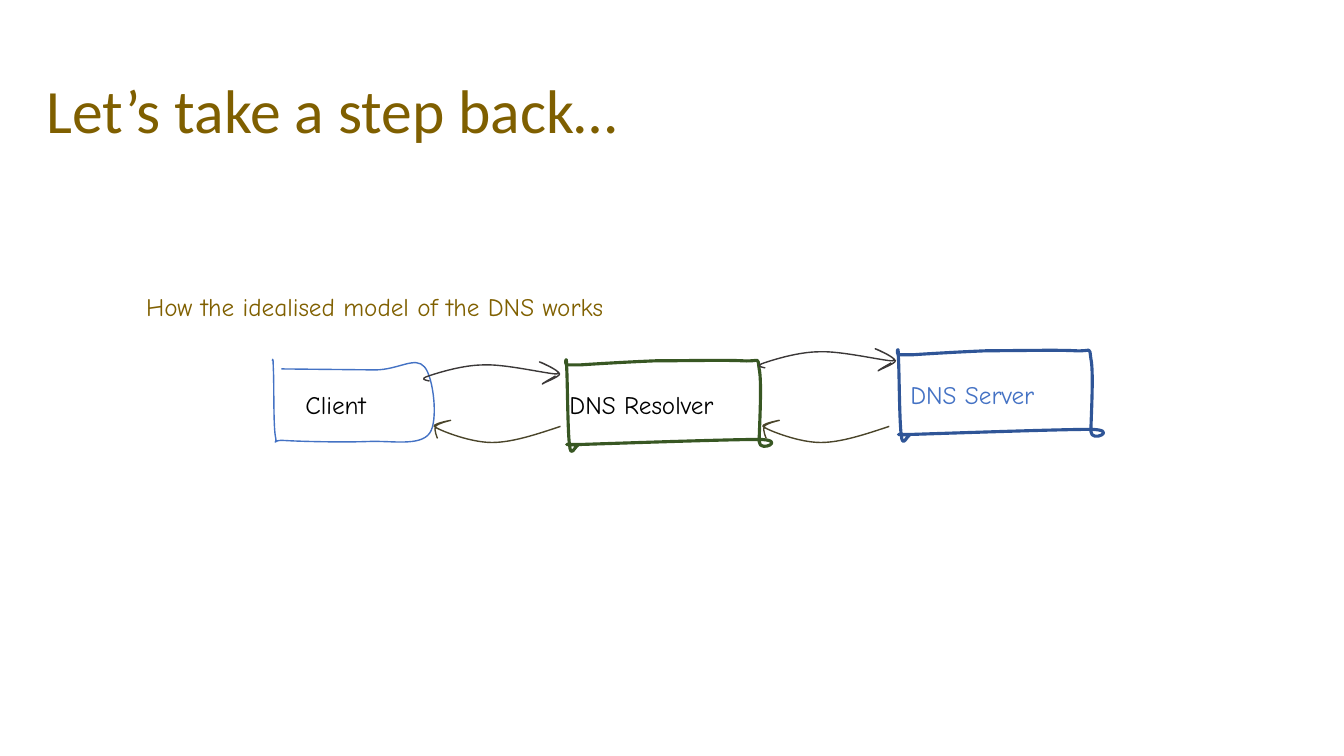
from dataclasses import dataclass

from lxml.etree import SubElement
from pptx import Presentation
from pptx.dml.color import RGBColor as Rgb
from pptx.enum.text import MSO_ANCHOR as Anchor, MSO_AUTO_SIZE as Fit, PP_ALIGN as Align
from pptx.oxml.ns import qn
from pptx.util import Pt

PX = 9144  # EMU per px, 100 px to the inch


@dataclass(frozen=True)
class Theme:
    title_font: str = "Calibri"
    hand_font: str = "Comic Neue"
    title_size: int = 44
    label_size: int = 18
    thin: float = 1
    thick: float = 2.25
    title: str = "7F5F00"
    caption: str = "806000"
    text: str = "000000"
    client: str = "4472C4"
    resolver: str = "385723"
    server: str = "2F5597"
    request: str = "3B3838"
    reply: str = "4A452A"


@dataclass(frozen=True)
class Stroke:
    """A hand-drawn line: steps of two numbers are straight, of six are cubic curves."""
    width: int
    height: int
    start: tuple
    steps: tuple
    closed: bool = False


CLIENT_STROKE = Stroke(161, 82, (9, 10), (
    (102, 11), (125, 11, 142, -3, 151, 8),
    (160, 18, 165, 62, 156, 74), (146, 87, 119, 81, 95, 82),
    (71, 83, 28, 82, 12, 81), (-3, 80, 6, 88, 3, 76),
    (1, 63, 2, 20, 1, 8), (1, -4, 0, 2, 0, 2),
))
BOX_STROKE = Stroke(204, 91, (15, 6), (
    (30, 5, 63, 3, 89, 2), (116, 2, 159, 1, 176, 2),
    (194, 3, 190, -3, 192, 10), (195, 23, 192, 71, 192, 82),
    (192, 94, 221, 80, 191, 80), (162, 80, 45, 84, 15, 85),
    (-15, 85, 13, 85, 12, 86), (10, 86, 5, 99, 4, 86),
    (2, 73, 2, 20, 1, 7), (1, -7, -1, 6, 1, 6), (4, 6, 0, 6, 15, 6),
), closed=True)
REQUEST_STROKE = Stroke(135, 21, (6, 19), (
    (1, 18, -4, 17, 5, 14), (14, 11, 39, 3, 60, 3),
    (81, 2, 123, 12, 132, 12), (141, 11, 115, 0, 115, 0),
    (116, 0, 134, 8, 135, 12), (135, 15, 118, 21, 118, 22),
    (117, 22, 124, 18, 131, 14),
))
REPLY_STROKE = Stroke(126, 21, (125, 6), (
    (101, 14, 77, 22, 57, 22), (36, 22, 8, 11, 1, 7),
    (-6, 4, 16, 0, 16, 0), (16, 0, 3, 3, 1, 6), (-1, 9, 3, 18, 3, 18), (3, 18),
))


def apply(target, formats):
    for name, value in formats.items():
        setattr(target, name, value)


def write(frame, text, font, size, color):
    para = frame.paragraphs[0]
    span = para.add_run()
    span.text = text
    apply(span.font, {"name": font, "size": Pt(size)})
    span.font.color.rgb = Rgb.from_string(color)
    return para


def place(shape, box):
    apply(shape, dict(zip(("left", "top", "width", "height"), (n * PX for n in box))))


def add_step(outline, tag, numbers):
    step = SubElement(outline, qn(tag))
    for x, y in zip(numbers[::2], numbers[1::2]):
        SubElement(step, qn("a:pt"), x=str(x), y=str(y))


def draw_stroke(page, left, top, stroke, color, weight):
    # The frame fixes the size; the curves then take its place
    builder = page.shapes.build_freeform(0, 0, scale=PX)
    builder.add_line_segments([(stroke.width, 0), (stroke.width, stroke.height)])
    shape = builder.convert_to_shape(left * PX, top * PX)
    outline = next(shape.element.iter(qn("a:path")))
    for corner in list(outline):
        outline.remove(corner)
    add_step(outline, "a:moveTo", stroke.start)
    for numbers in stroke.steps:
        add_step(outline, "a:lnTo" if len(numbers) == 2 else "a:cubicBezTo", numbers)
    if stroke.closed:
        SubElement(outline, qn("a:close"))
    # Line only
    shape.shadow.inherit = False
    shape.fill.background()
    shape.line.color.rgb = Rgb.from_string(color)
    shape.line.width = Pt(weight)


def add_label(page, left, top, width, text, color):
    label = page.shapes.add_textbox(left * PX, top * PX, width * PX, 40 * PX)
    apply(label.text_frame, {"word_wrap": False, "auto_size": Fit.SHAPE_TO_FIT_TEXT})
    write(label.text_frame, text, THEME.hand_font, THEME.label_size, color)


def add_title(page, box, text):
    title = page.shapes.title
    place(title, box)
    apply(title.text_frame, {"vertical_anchor": Anchor.MIDDLE, "word_wrap": True,
                             "auto_size": Fit.NONE})
    para = write(title.text_frame, text, THEME.title_font, THEME.title_size, THEME.title)
    apply(para, {"alignment": Align.LEFT, "line_spacing": 0.9})


def add_diagram(page, left, top):
    # Nodes: client and resolver
    draw_stroke(page, left, top + 10, CLIENT_STROKE, THEME.client, THEME.thin)
    add_label(page, left + 23, top + 35, 101, "Client", THEME.text)
    draw_stroke(page, left + 291, top + 10, BOX_STROKE, THEME.resolver, THEME.thick)
    add_label(page, left + 285, top + 35, 207, "DNS Resolver", THEME.text)
    # Arrows: requests to the right, replies to the left
    for x, y in ((150, 13), (483, 0)):
        draw_stroke(page, left + x, top + y, REQUEST_STROKE, THEME.request, THEME.thin)
    for x in (161, 487):
        draw_stroke(page, left + x, top + 71, REPLY_STROKE, THEME.reply, THEME.thin)
    # Node: server
    draw_stroke(page, left + 620, top, BOX_STROKE, THEME.server, THEME.thick)
    add_label(page, left + 623, top + 25, 184, "DNS Server", THEME.client)


THEME = Theme()


def main():
    deck = Presentation()
    apply(deck, {"slide_width": 1333 * PX, "slide_height": 750 * PX})
    page = deck.slides.add_slide(deck.slide_layouts.get_by_name("Title Only"))
    add_title(page, (36, 40, 1206, 145), "Let’s take a step back…")
    add_diagram(page, 270, 346)
    add_label(page, 135, 284, 592, "How the idealised model of the DNS works", THEME.caption)
    deck.save("out.pptx")


if __name__ == "__main__":
    main()
